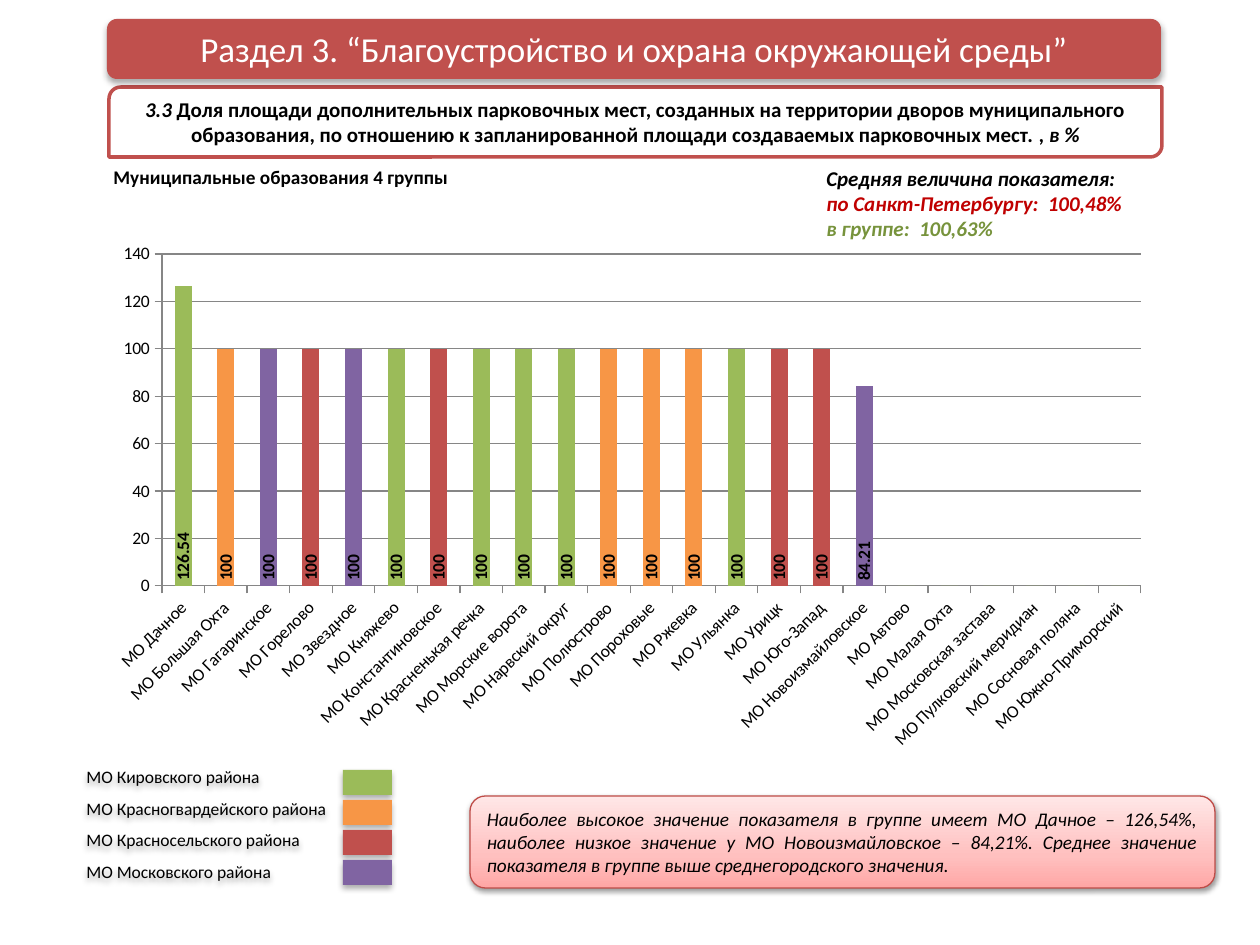
import copy

import pptx
import pptx.chart.data
import pptx.dml.color
import pptx.enum.chart
import pptx.enum.shapes
import pptx.enum.text
import pptx.oxml
import pptx.oxml.ns
import pptx.util

SHAPE = pptx.enum.shapes.MSO_SHAPE
ALIGN = pptx.enum.text.PP_ALIGN
ANCHOR = pptx.enum.text.MSO_ANCHOR
qn = pptx.oxml.ns.qn

PX = 914400 / 126
FONT = "Calibri"
BLACK, WHITE, GRID = "000000", "FFFFFF", "868686"
GREEN, ORANGE, RED, PURPLE = "9BBB59", "F79646", "C0504D", "8064A2"

TITLE = "Раздел 3. “Благоустройство и охрана окружающей среды”"
INDICATOR = [
    ("3.3 ", {"italic": True}),
    ("Доля площади дополнительных парковочных мест, созданных на территории дворов "
     "муниципального образования, по отношению к запланированной площади создаваемых "
     "парковочных мест. ", {}),
    (", в %", {"italic": True}),
]
GROUP = "Муниципальные образования 4 группы"
AVERAGES = [
    [("Средняя величина показателя:", {})],
    [("по Санкт-Петербургу:  100,48%", {"color": "C00000"})],
    [("в группе:  100,63%", {"color": "77933C"})],
]
DISTRICTS = [
    ("МО Кировского района", GREEN),
    ("МО Красногвардейского района", ORANGE),
    ("МО Красносельского района", RED),
    ("МО Московского района", PURPLE),
]
CONCLUSION = (
    "Наиболее высокое значение показателя в группе имеет МО Дачное – 126,54%, наиболее "
    "низкое значение у МО Новоизмайловское – 84,21%. Среднее значение показателя в группе "
    "выше среднегородского значения."
)
CONCLUSION_GRADIENT = [(0, "FFA6A5"), (0.35, "FFC0BF"), (1, "FFE7E7")]
MUNICIPALITIES = [
    ("МО Дачное", 126.54, GREEN),
    ("МО Большая Охта", 100, ORANGE),
    ("МО Гагаринское", 100, PURPLE),
    ("МО Горелово", 100, RED),
    ("МО Звездное", 100, PURPLE),
    ("МО Княжево", 100, GREEN),
    ("МО Константиновское", 100, RED),
    ("МО Красненькая речка", 100, GREEN),
    ("МО Морские ворота", 100, GREEN),
    ("МО Нарвский округ", 100, GREEN),
    ("МО Полюстрово", 100, ORANGE),
    ("МО Пороховые", 100, ORANGE),
    ("МО Ржевка", 100, ORANGE),
    ("МО Ульянка", 100, GREEN),
    ("МО Урицк", 100, RED),
    ("МО Юго-Запад", 100, RED),
    ("МО Новоизмайловское", 84.21, PURPLE),
    ("МО Автово", 0, GREEN),
    ("МО Малая Охта", 0, GREEN),
    ("МО Московская застава", 0, GREEN),
    ("МО Пулковский меридиан", 0, GREEN),
    ("МО Сосновая поляна", 0, GREEN),
    ("МО Южно-Приморский", 0, GREEN),
]
CHART_BOX = (107, 234, 1054, 529)
PLOT_BOX = (55, 20, 979, 332)  # inside the chart


def px(*lengths):
    return [pptx.util.Emu(round(length * PX)) for length in lengths]


def rgb(color):
    return pptx.dml.color.RGBColor.from_string(color)


def set_font(font, size, color=BLACK, bold=False, italic=False):
    font.name, font.size = FONT, pptx.util.Pt(size)
    font.bold, font.italic = bold, italic
    font.color.rgb = rgb(color)


def write(shape, paragraphs, align=ALIGN.LEFT, anchor=ANCHOR.TOP, wrap=True, after=0, **font):
    """Fill a shape with paragraphs, each a list of (text, font changes) runs."""
    frame = shape.text_frame
    frame.word_wrap, frame.vertical_anchor = wrap, anchor
    for index, runs in enumerate(paragraphs):
        paragraph = frame.add_paragraph() if index else frame.paragraphs[0]
        paragraph.alignment, paragraph.space_after = align, pptx.util.Pt(after)
        for text, changes in runs:
            run = paragraph.add_run()
            run.text = text
            set_font(run.font, **{**font, **changes})


def add_shadow(shape, alpha=32, blur=3.5, distance=2.2):
    shape.shadow.inherit = False
    effects = shape._element.spPr.find(qn("a:effectLst"))
    effects.append(pptx.oxml.parse_xml(
        f'<a:outerShdw {pptx.oxml.ns.nsdecls("a")} blurRad="{pptx.util.Pt(blur)}" '
        f'dist="{pptx.util.Pt(distance)}" dir="5400000" rotWithShape="0">'
        f'<a:srgbClr val="{BLACK}"><a:alpha val="{alpha * 1000}"/></a:srgbClr></a:outerShdw>'))


def add_box(slide, kind, box, fill, line=None, width=1):
    shape = slide.shapes.add_shape(kind, *px(*box))
    shape.shadow.inherit = False
    shape.fill.solid()
    shape.fill.fore_color.rgb = rgb(fill)
    if line:
        shape.line.color.rgb, shape.line.width = rgb(line), pptx.util.Pt(width)
    else:
        shape.line.fill.background()
    return shape


def set_gradient(fill, stops):
    fill.gradient()
    fill.gradient_angle = 90
    stop_list = fill.gradient_stops[0]._gs.getparent()
    while len(stop_list) < len(stops):
        stop_list.append(copy.deepcopy(stop_list[0]))
    for stop, (position, color) in zip(fill.gradient_stops, stops):
        stop.position, stop.color.rgb = position, rgb(color)


def rotate_text(parent, degrees):
    body = parent.find(qn("c:txPr")).find(qn("a:bodyPr"))
    body.set("rot", str(degrees * 60000))
    body.set("vert", "horz")


def add_bar_chart(slide):
    data = pptx.chart.data.CategoryChartData()
    data.categories = [name for name, _, _ in MUNICIPALITIES]
    data.add_series("Series 1", [value for _, value, _ in MUNICIPALITIES])
    kind = pptx.enum.chart.XL_CHART_TYPE.COLUMN_CLUSTERED
    chart = slide.shapes.add_chart(kind, *px(*CHART_BOX), data).chart
    chart.has_legend = chart.has_title = False
    set_font(chart.font, 10)

    plot = chart.plots[0]
    plot.gap_width, plot.vary_by_categories = 150, False
    series = plot.series[0]
    series.format.fill.solid()
    series.format.fill.fore_color.rgb = rgb(GREEN)
    labels = series.data_labels
    labels.show_value = True
    labels.position = pptx.enum.chart.XL_LABEL_POSITION.INSIDE_BASE
    set_font(labels.font, 10, bold=True)
    rotate_text(labels._element, -90)

    hidden_labels = 0
    for index, (_, value, color) in enumerate(MUNICIPALITIES):
        if color != GREEN:
            fill = series.points[index].format.fill
            fill.solid()
            fill.fore_color.rgb = rgb(color)
        if value == 0:
            labels._element.insert(hidden_labels, pptx.oxml.parse_xml(
                f'<c:dLbl {pptx.oxml.ns.nsdecls("c")}><c:idx val="{index}"/>'
                '<c:delete val="1"/></c:dLbl>'))
            hidden_labels += 1

    values, categories = chart.value_axis, chart.category_axis
    values.minimum_scale, values.maximum_scale, values.major_unit = 0, 140, 20
    values.has_major_gridlines = True
    for axis in (values, categories):
        axis.major_tick_mark = pptx.enum.chart.XL_TICK_MARK.OUTSIDE
        axis.format.line.color.rgb = rgb(GRID)
        set_font(axis.tick_labels.font, 10)
    values.major_gridlines.format.line.color.rgb = rgb(GRID)
    rotate_text(categories._element, -45)

    area = chart._chartSpace.chart.plotArea
    for old in area.findall(qn("c:layout")):
        area.remove(old)
    sizes = "".join(f'<c:{key} val="{part / whole:.4f}"/>'
                    for key, part, whole in zip("xywh", PLOT_BOX, CHART_BOX[2:] * 2))
    area.insert(0, pptx.oxml.parse_xml(
        f'<c:layout {pptx.oxml.ns.nsdecls("c")}><c:manualLayout><c:layoutTarget val="inner"/>'
        f'<c:xMode val="edge"/><c:yMode val="edge"/>{sizes}</c:manualLayout></c:layout>'))


def main():
    presentation = pptx.Presentation()
    presentation.slide_width, presentation.slide_height = px(1260, 945)
    slide = presentation.slides.add_slide(presentation.slide_layouts[6])

    indicator = add_box(slide, SHAPE.ROUND_2_DIAG_RECTANGLE, (109, 87, 1053, 70), WHITE, RED, 2)
    write(indicator, [INDICATOR], ALIGN.CENTER, ANCHOR.MIDDLE, size=12, bold=True)
    title = add_box(slide, SHAPE.ROUNDED_RECTANGLE, (107, 19, 1054, 60), RED)
    add_shadow(title)
    write(title, [[(TITLE, {})]], ALIGN.CENTER, ANCHOR.MIDDLE, size=20, color=WHITE)

    group = slide.shapes.add_textbox(*px(101, 159, 393, 36))
    write(group, [[(GROUP, {})]], size=11, bold=True)
    averages = slide.shapes.add_textbox(*px(814, 159, 328, 90))
    write(averages, AVERAGES, wrap=False, size=12, bold=True, italic=True)

    legend = slide.shapes.add_textbox(*px(74, 760, 358, 130))
    add_shadow(legend)
    write(legend, [[(name, {})] for name, _ in DISTRICTS], after=6, size=10)
    for index, (_, color) in enumerate(DISTRICTS):
        add_shadow(add_box(slide, SHAPE.RECTANGLE, (343, 770 + 30 * index, 49, 25), color))

    conclusion = add_box(slide, SHAPE.ROUNDED_RECTANGLE, (470, 796, 745, 92), WHITE, "BF4C48", 0.75)
    set_gradient(conclusion.fill, CONCLUSION_GRADIENT)
    add_shadow(conclusion, 38, 3.1, 1.6)
    write(conclusion, [[(CONCLUSION, {})]], ALIGN.JUSTIFY, ANCHOR.MIDDLE, size=11, italic=True)

    add_bar_chart(slide)
    presentation.save("out.pptx")


if __name__ == "__main__":
    main()
